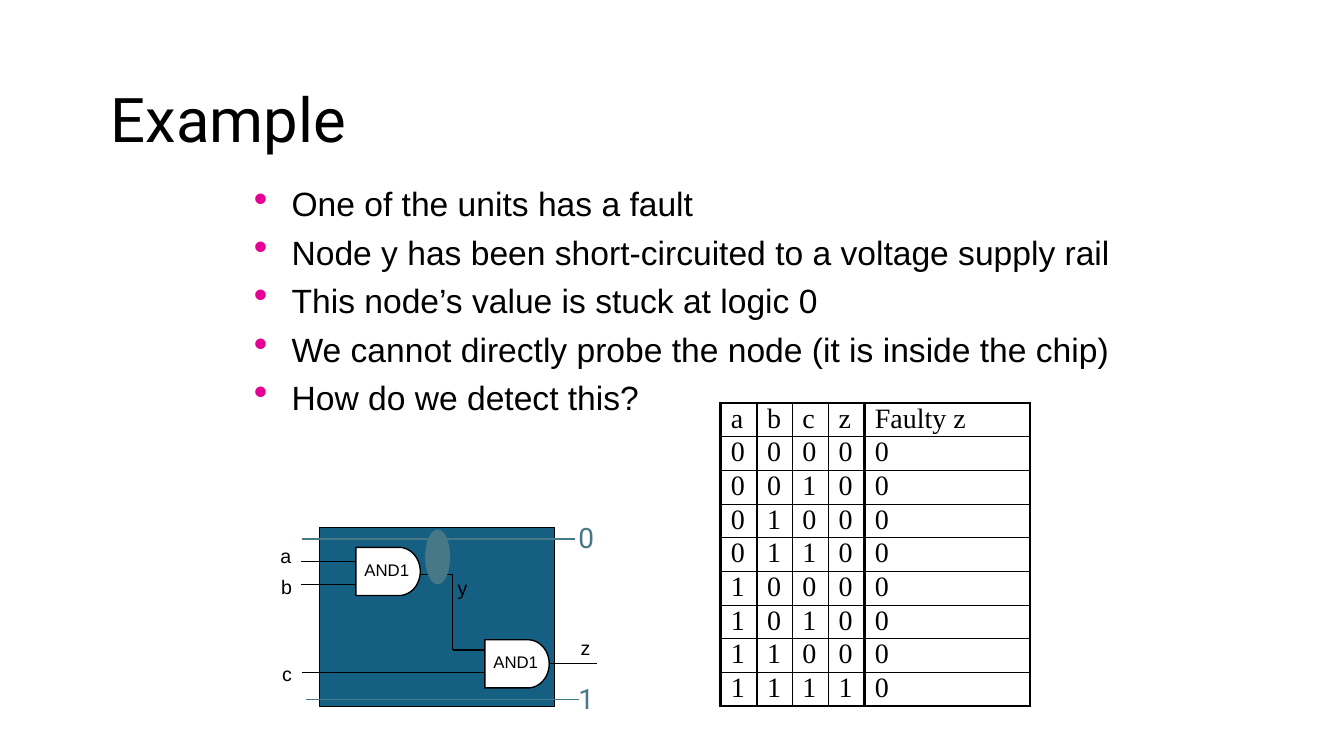
from dataclasses import dataclass
from math import cos, pi, sin

from lxml import etree
from pptx import Presentation
from pptx import util as u
from pptx.dml.color import RGBColor
from pptx.enum import shapes, text
from pptx.oxml import ns


@dataclass(frozen=True)
class Theme:
    ink: str = "000000"
    paper: str = "FFFFFF"
    chip: str = "156082"
    rail: str = "467886"
    bullet: str = "E50093"
    sans: str = "Arial"
    display: str = "Roboto"
    serif: str = "Times New Roman"
    title: float = 44
    body: float = 24
    cell: float = 20
    rail_label: float = 20
    node: float = 14
    gate: float = 12


class Deck:
    def __init__(self, theme):
        self.theme = theme
        self.prs = Presentation()
        self.prs.slide_width, self.prs.slide_height = u.Pt(960), u.Pt(540)
        self.s = self.prs.slides.add_slide(self.prs.slide_layouts[5])

    def apply(self, obj, formats):
        for name, value in formats.items():
            setattr(obj, name, value)

    def element(self, parent, tag, **attrs):
        return etree.SubElement(parent, ns.qn(tag), attrs)

    def add_run(self, p, words, size, font, color):
        r = p.add_run()
        r.text = words
        self.apply(r.font, {"size": u.Pt(size), "name": font})
        r.font.color.rgb = RGBColor.from_string(color)

    def title(self, words, x, y, w, h):
        sp = self.s.shapes.title
        self.apply(sp, {"left": u.Pt(x), "top": u.Pt(y), "width": u.Pt(w), "height": u.Pt(h)})
        sp.text_frame.vertical_anchor = text.MSO_ANCHOR.MIDDLE
        p = sp.text_frame.paragraphs[0]
        self.apply(p, {"alignment": text.PP_ALIGN.LEFT, "line_spacing": 0.9})
        self.add_run(p, words, self.theme.title, self.theme.display, self.theme.ink)

    def text(self, lines, x, y, w, h, size, font, color, inset=(0, 0), wrap=False):
        tf = self.s.shapes.add_textbox(u.Pt(x), u.Pt(y), u.Pt(w), u.Pt(h)).text_frame
        across, down = map(u.Pt, inset)
        self.apply(tf, {"word_wrap": wrap, "margin_left": across, "margin_right": across,
                        "margin_top": down, "margin_bottom": down})
        self.add_run(tf.paragraphs[0], lines[0], size, font, color)
        for line in lines[1:]:
            self.add_run(tf.add_paragraph(), line, size, font, color)
        return tf

    def bullets(self, lines, x, y, w, h):
        t = self.theme
        tf = self.text(lines, x, y, w, h, t.body, t.sans, t.ink, (7.2, 3.6), True)
        for p in tf.paragraphs:
            p.space_before = u.Pt(5.8)
            pPr = p._p.get_or_add_pPr()
            pPr.set("marL", str(u.Pt(27)))
            pPr.set("indent", str(-u.Pt(27)))
            color = self.element(pPr, "a:buClr")
            self.element(color, "a:srgbClr", val=t.bullet)
            self.element(pPr, "a:buSzPct", val="120000")
            self.element(pPr, "a:buChar", char="•")

    def paint(self, sp, fill, line):
        sp.shadow.inherit = False
        sp.fill.solid()
        sp.fill.fore_color.rgb = RGBColor.from_string(fill)
        sp.line.color.rgb = RGBColor.from_string(line)
        sp.line.width = u.Pt(1)

    def shape(self, kind, x, y, w, h, fill, line):
        sp = self.s.shapes.add_shape(kind, u.Pt(x), u.Pt(y), u.Pt(w), u.Pt(h))
        self.paint(sp, fill, line)

    def line(self, x1, y1, x2, y2, color, width=1):
        c = self.s.shapes.add_connector(
            shapes.MSO_CONNECTOR.STRAIGHT, u.Pt(x1), u.Pt(y1), u.Pt(x2), u.Pt(y2))
        c.line.color.rgb = RGBColor.from_string(color)
        c.line.width = u.Pt(width)
        self.element(c._element.spPr, "a:effectLst")

    def gate(self, name, x, y):
        t = self.theme
        w, h, flat = 46, 34.4, 30.8
        steps = 32
        arc = [(x + flat + (w - flat) * sin(pi * i / steps),
                y + h / 2 * (1 - cos(pi * i / steps))) for i in range(steps + 1)]
        outline = [(u.Pt(px), u.Pt(py)) for px, py in arc + [(x, y + h)]]
        builder = self.s.shapes.build_freeform(u.Pt(x), u.Pt(y))
        builder.add_line_segments(outline, close=True)
        self.paint(builder.convert_to_shape(), t.paper, t.ink)
        self.text([name], x - 1, y + 5, 46.4, 21.6, t.gate, t.sans, t.ink, (7.2, 3.6))

    def table(self, rows, x, y, widths, row_height, heavy_columns):
        t = self.theme
        frame = self.s.shapes.add_table(len(rows), len(widths), u.Pt(x), u.Pt(y),
                                        u.Pt(sum(widths)), u.Pt(row_height * len(rows)))
        tbl = frame.table
        self.apply(tbl, {"first_row": False, "horz_banding": False})
        for column, width in zip(tbl.columns, widths):
            column.width = u.Pt(width)
        for i, row in enumerate(rows):
            tbl.rows[i].height = u.Pt(row_height)
            for j, words in enumerate(row):
                cell = tbl.cell(i, j)
                self.apply(cell, {"margin_left": u.Pt(7.2), "margin_right": u.Pt(7.2),
                                  "margin_top": 0, "margin_bottom": 0})
                self.add_run(cell.text_frame.paragraphs[0], words, t.cell, t.serif, t.ink)
                self.borders(cell, {"a:lnL": j in heavy_columns,
                                    "a:lnR": j + 1 in heavy_columns,
                                    "a:lnT": i == 0,
                                    "a:lnB": i == len(rows) - 1})
                cell.fill.background()

    def borders(self, cell, sides):
        tcPr = cell._tc.get_or_add_tcPr()
        for tag, heavy in sides.items():
            ln = self.element(tcPr, tag, w=str(u.Pt(2 if heavy else 1)))
            fill = self.element(ln, "a:solidFill")
            self.element(fill, "a:srgbClr", val=self.theme.ink)


def main():
    t = Theme()
    deck = Deck(t)
    deck.title("Example", 72, 37.4, 816, 100.8)
    deck.bullets([
        "One of the units has a fault",
        "Node y has been short-circuited to a voltage supply rail",
        "This node’s value is stuck at logic 0",
        "We cannot directly probe the node (it is inside the chip)",
        "How do we detect this?",
    ], 174.2, 127.4, 666, 191.5)

    deck.shape(shapes.MSO_SHAPE.RECTANGLE, 228.2, 376.6, 167.8, 128.2, t.chip, t.ink)
    wires = [
        (215.3, 401, 260, 401),
        (215.3, 417.6, 260, 417.6),
        (216, 480.2, 354, 480.2),
        (287.3, 410.4, 323.3, 410.4),
        (323.3, 410.4, 323.3, 464.4),
        (323.3, 464.4, 353.5, 464.4),
        (384.5, 473.8, 426.2, 473.8),
    ]
    for wire in wires:
        deck.line(*wire, t.ink)
    for x, y in [(254.2, 391), (346.3, 457)]:
        deck.gate("AND1", x, y)

    nodes = [("a", 200.2, 388.8), ("b", 200.9, 410.4), ("c", 201.6, 473),
             ("y", 326.9, 411.1), ("z", 414.7, 454.3)]
    for name, x, y in nodes:
        deck.text([name], x, y, 8.3, 13.7, t.node, t.sans, t.ink)

    rails = [("0", 216, 385.2, 1.5, 367.9), ("1", 218.9, 499.7, 1, 483.1)]
    for name, x, y, width, label_y in rails:
        deck.line(x, y, x + 194.4, y, t.rail, width)
        deck.text([name], 406.1, label_y, 25, 31, t.rail_label, t.display, t.rail,
                  (7.2, 3.6), True)

    inputs = [f"{n:03b}" for n in range(8)]
    rows = [["a", "b", "c", "z", "Faulty z"]]
    rows += [[*bits, "1" if bits == "111" else "0", "0"] for bits in inputs]
    deck.table(rows, 514.8, 288, [25.9, 25.2, 25.9, 25.9, 118.1], 24.05, {0, 4, 5})

    deck.shape(shapes.MSO_SHAPE.OVAL, 304.2, 378.7, 16.8, 38.2, t.rail, t.rail)
    deck.prs.save("out.pptx")


if __name__ == "__main__":
    main()
